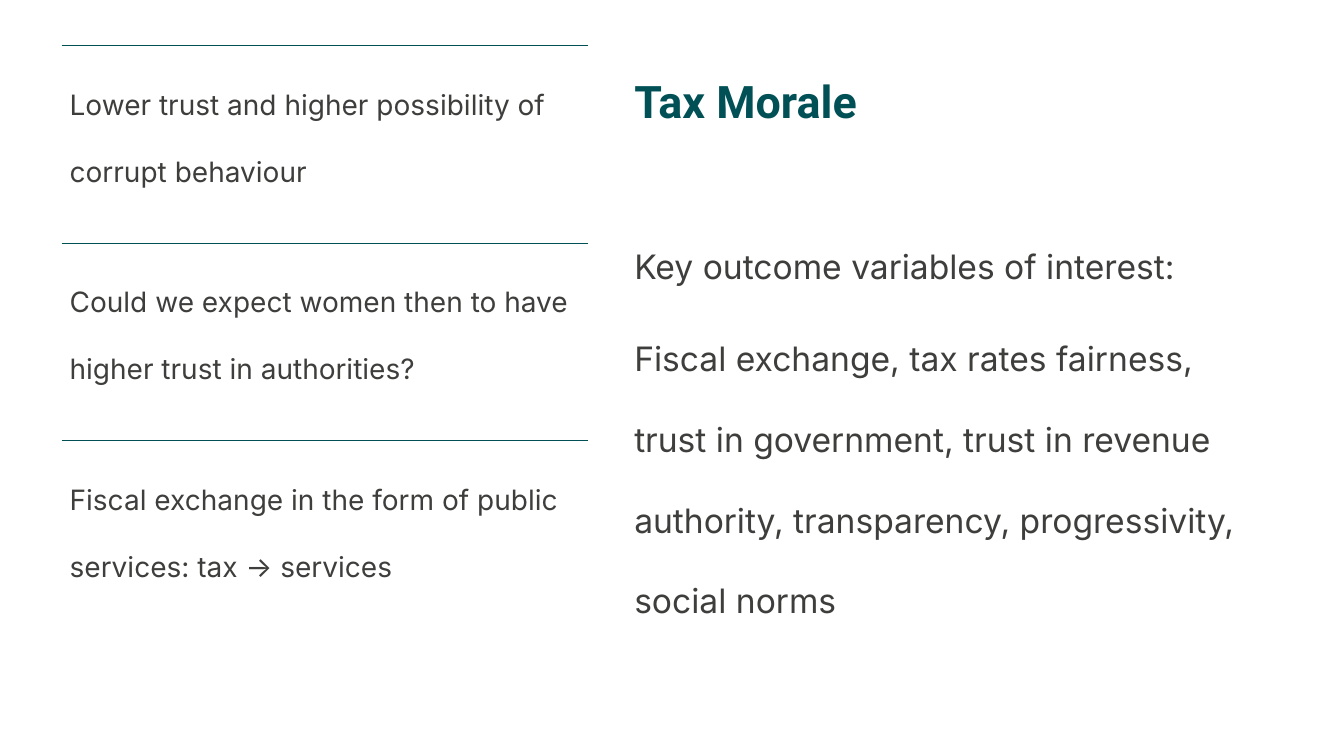
from dataclasses import dataclass

from lxml import etree
from pptx import Presentation
from pptx import util as u
from pptx.dml import color
from pptx.enum import shapes, text
from pptx.oxml import ns


@dataclass(frozen=True)
class Theme:
    accent: str = "005056"
    ink: str = "3E3E3C"
    title_font: str = "Roboto"
    body_font: str = "Inter"
    title_size: int = 32
    body_size: int = 24
    point_size: int = 20
    rule_width: float = 0.5
    body_leading: float = 2.0
    title_leading: float = 0.9
    after_share: float = 0.35


@dataclass(frozen=True)
class Area:
    left: float
    top: float
    width: float
    height: float


@dataclass(frozen=True)
class Style:
    font: str
    size: int
    colour: str
    leading: float
    before: float = 0
    after: float = 0
    bold: bool = False


THEME = Theme()
SLIDE_WIDTH, SLIDE_HEIGHT = u.Inches(13.33), u.Inches(7.5)
TITLE_AREA = Area(46.44, 5.87, 37.43, 11.73)
BODY_AREA = Area(46.44, 26.53, 48.46, 57.87)
FIRST_ROW = Area(4.58, 6, 39.16, 26.13)
TITLE_STYLE = Style(THEME.title_font, THEME.title_size, THEME.accent,
                    THEME.title_leading, before=10, bold=True)
BODY_STYLE, POINT_STYLE = (
    Style(THEME.body_font, size, THEME.ink, THEME.body_leading,
          after=THEME.after_share * size)
    for size in (THEME.body_size, THEME.point_size)
)
TITLE = "Tax Morale"
OUTCOMES = [
    "Key outcome variables of interest:",
    "Fiscal exchange, tax rates fairness, trust in government, "
    "trust in revenue authority, transparency, progressivity, social norms",
]
POINTS = [
    "Lower trust and higher possibility of corrupt behaviour",
    "Could we expect women then to have higher trust in authorities?",
    "Fiscal exchange in the form of public services: tax → services",
]


def across(percent: float) -> int:
    return round(SLIDE_WIDTH * percent / 100)


def down(percent: float) -> int:
    return round(SLIDE_HEIGHT * percent / 100)


def place(shape, area: Area) -> None:
    shape.left, shape.top = across(area.left), down(area.top)
    shape.width, shape.height = across(area.width), down(area.height)


def write(shape, lines: list[str], style: Style, anchor=text.MSO_ANCHOR.TOP) -> None:
    frame = shape.text_frame
    frame.word_wrap = True
    frame.auto_size = text.MSO_AUTO_SIZE.NONE
    frame.vertical_anchor = anchor
    for index, line in enumerate(lines):
        paragraph = frame.add_paragraph() if index else frame.paragraphs[0]
        paragraph.alignment = text.PP_ALIGN.LEFT
        paragraph.line_spacing = style.leading
        paragraph.space_before = u.Pt(style.before)
        paragraph.space_after = u.Pt(style.after)
        properties = paragraph._p.get_or_add_pPr()
        properties.set("marL", "0")
        properties.set("indent", "0")
        etree.SubElement(properties, ns.qn("a:buNone"))
        run = paragraph.add_run()
        run.text = line
        run.font.name = style.font
        run.font.size = u.Pt(style.size)
        run.font.bold = style.bold
        run.font.color.rgb = color.RGBColor.from_string(style.colour)


def add_rule(slide, area: Area) -> None:
    left, top = across(area.left), down(area.top)
    rule = slide.shapes.add_connector(
        shapes.MSO_CONNECTOR.STRAIGHT, left, top, left + across(area.width), top)
    rule.line.color.rgb = color.RGBColor.from_string(THEME.accent)
    rule.line.width = u.Pt(THEME.rule_width)
    etree.SubElement(rule._element.spPr, ns.qn("a:effectLst"))


def add_point(slide, area: Area, line: str) -> None:
    add_rule(slide, area)
    box = slide.shapes.add_textbox(0, 0, 0, 0)
    place(box, area)
    frame = box.text_frame
    frame.margin_left = frame.margin_right = u.Inches(0.08)
    frame.margin_top = frame.margin_bottom = u.Inches(0.08)
    write(box, [line], POINT_STYLE)


def main() -> None:
    """Build the tax morale slide and save it."""
    presentation = Presentation()
    presentation.slide_width, presentation.slide_height = SLIDE_WIDTH, SLIDE_HEIGHT
    slide = presentation.slides.add_slide(presentation.slide_layouts[1])
    title, body = slide.shapes.title, slide.placeholders[1]
    place(title, TITLE_AREA)
    write(title, [TITLE], TITLE_STYLE, text.MSO_ANCHOR.BOTTOM)
    place(body, BODY_AREA)
    write(body, OUTCOMES, BODY_STYLE)
    for row, line in enumerate(POINTS):
        top = FIRST_ROW.top + row * FIRST_ROW.height
        add_point(slide, Area(FIRST_ROW.left, top, FIRST_ROW.width, FIRST_ROW.height), line)
    presentation.save("out.pptx")


if __name__ == "__main__":
    main()
